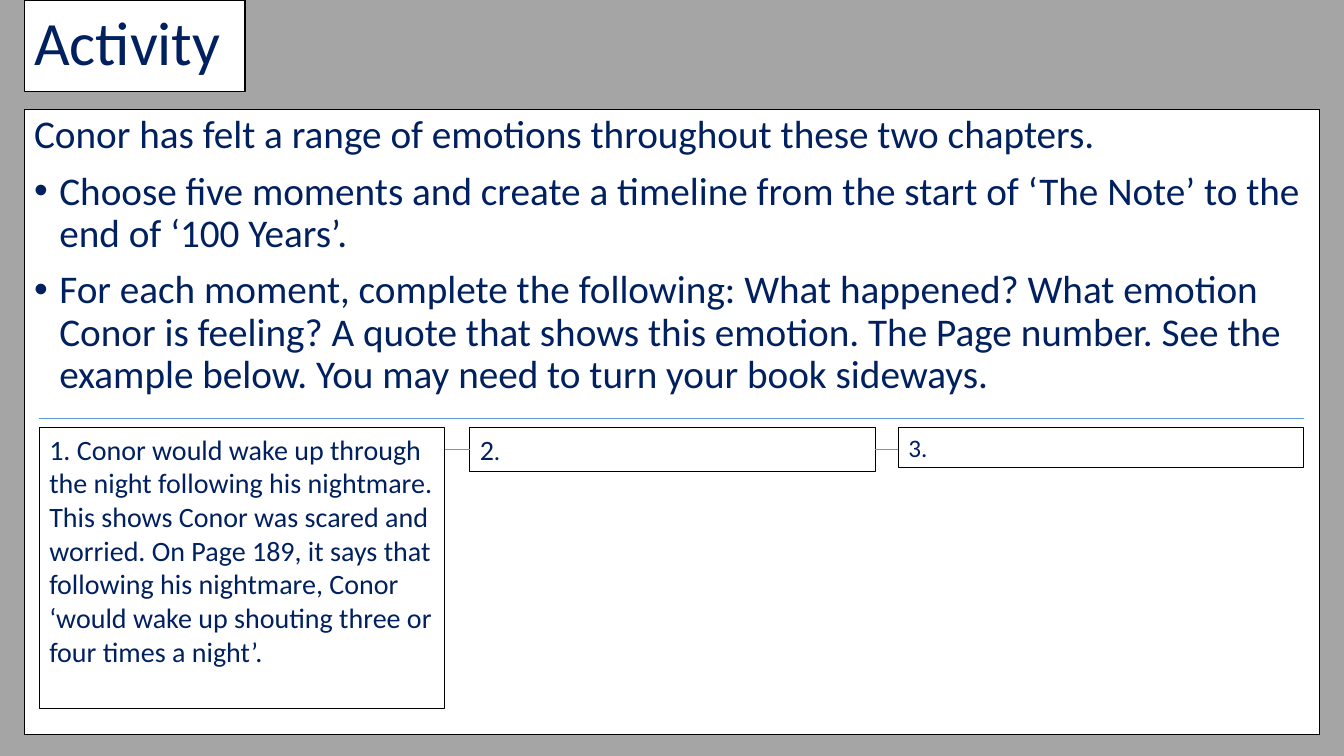
from lxml.etree import SubElement
from pptx import Presentation
from pptx.dml.color import RGBColor
from pptx.enum.shapes import MSO_CONNECTOR, MSO_SHAPE
from pptx.enum.text import MSO_ANCHOR, PP_ALIGN
from pptx.oxml.ns import qn
from pptx.util import Pt

PX = 9144
HUES = {"back": "A5A5A5", "card": "FFFFFF", "edge": "000000",
        "text": "002060", "rule": "5B9BD5"}
TASKS = [
    "Choose five moments and create a timeline from the start of ‘The Note’ to the end of ‘100 Years’.",
    "For each moment, complete the following: What happened? What emotion Conor is feeling? "
    "A quote that shows this emotion. The Page number. See the example below. "
    "You may need to turn your book sideways.",
]
SAMPLE = ("1. Conor would wake up through the night following his nightmare. "
          "This shows Conor was scared and worried. On Page 189, it says that following his nightmare, "
          "Conor ‘would wake up shouting three or four times a night’.")


def tint(hue):
    return RGBColor.from_string(HUES[hue])


def add_box(slide, left, top, width, height, fill=None, anchor=MSO_ANCHOR.TOP):
    box = slide.shapes.add_shape(MSO_SHAPE.RECTANGLE, left * PX, top * PX, width * PX, height * PX)
    box.shadow.inherit = False
    if fill:
        box.fill.solid()
        box.fill.fore_color.rgb = tint(fill)
    else:
        box.fill.background()
    box.line.color.rgb = tint("edge")
    box.line.width = Pt(0.75)
    box.text_frame.word_wrap = True
    box.text_frame.vertical_anchor = anchor
    return box


def add_run(para, text, size):
    run = para.add_run()
    run.text = text
    run.font.name = "Calibri"
    run.font.size = Pt(size)
    run.font.color.rgb = tint("text")


def write(box, text, size=20, space=None, before=0, bullet=False):
    frame = box.text_frame
    para = frame.add_paragraph() if frame.text else frame.paragraphs[0]
    para.alignment = PP_ALIGN.LEFT
    para.line_spacing = space
    para.space_before = Pt(before)
    if bullet:
        props = para._p.get_or_add_pPr()
        props.set("marL", str(25 * PX))
        props.set("indent", str(-25 * PX))
        SubElement(props, qn("a:buFont")).set("typeface", "Arial")
        SubElement(props, qn("a:buChar")).set("char", "•")
    add_run(para, text, size)
    return para


def add_line(slide, left, right, y):
    line = slide.shapes.add_connector(MSO_CONNECTOR.STRAIGHT, left * PX, y * PX, right * PX, y * PX)
    line.line.color.rgb = tint("rule")
    line.line.width = Pt(0.79)
    SubElement(line._element.spPr, qn("a:effectLst"))
    return line


def main():
    deck = Presentation()
    deck.slide_width, deck.slide_height = 1333 * PX, 750 * PX
    slide = deck.slides.add_slide(deck.slide_layouts[6])
    slide.background.fill.solid()
    slide.background.fill.fore_color.rgb = tint("back")

    title = add_box(slide, 24, 0, 219, 91, fill="card", anchor=MSO_ANCHOR.MIDDLE)
    write(title, "Activity", size=44, space=0.9)

    body = add_box(slide, 24, 109, 1285, 620, fill="card")
    write(body, "Conor has felt a range of emotions throughout these two chapters.",
          size=28, space=0.9, before=10)
    for task in TASKS:
        write(body, task, size=28, space=0.9, before=10, bullet=True)

    add_line(slide, 39, 1293, 415)
    first, second, third = [add_box(slide, left, 424, 402, height)
                            for left, height in ((39, 279), (466, 44), (891, 40))]
    write(first, SAMPLE)
    add_run(write(second, "2"), ".", 18)
    write(third, "3.", size=18)

    add_line(slide, 441, 466, 446).end_connect(second, 1)
    add_line(slide, 868, 891, 446).begin_connect(second, 3)
    deck.save("out.pptx")


if __name__ == "__main__":
    main()
